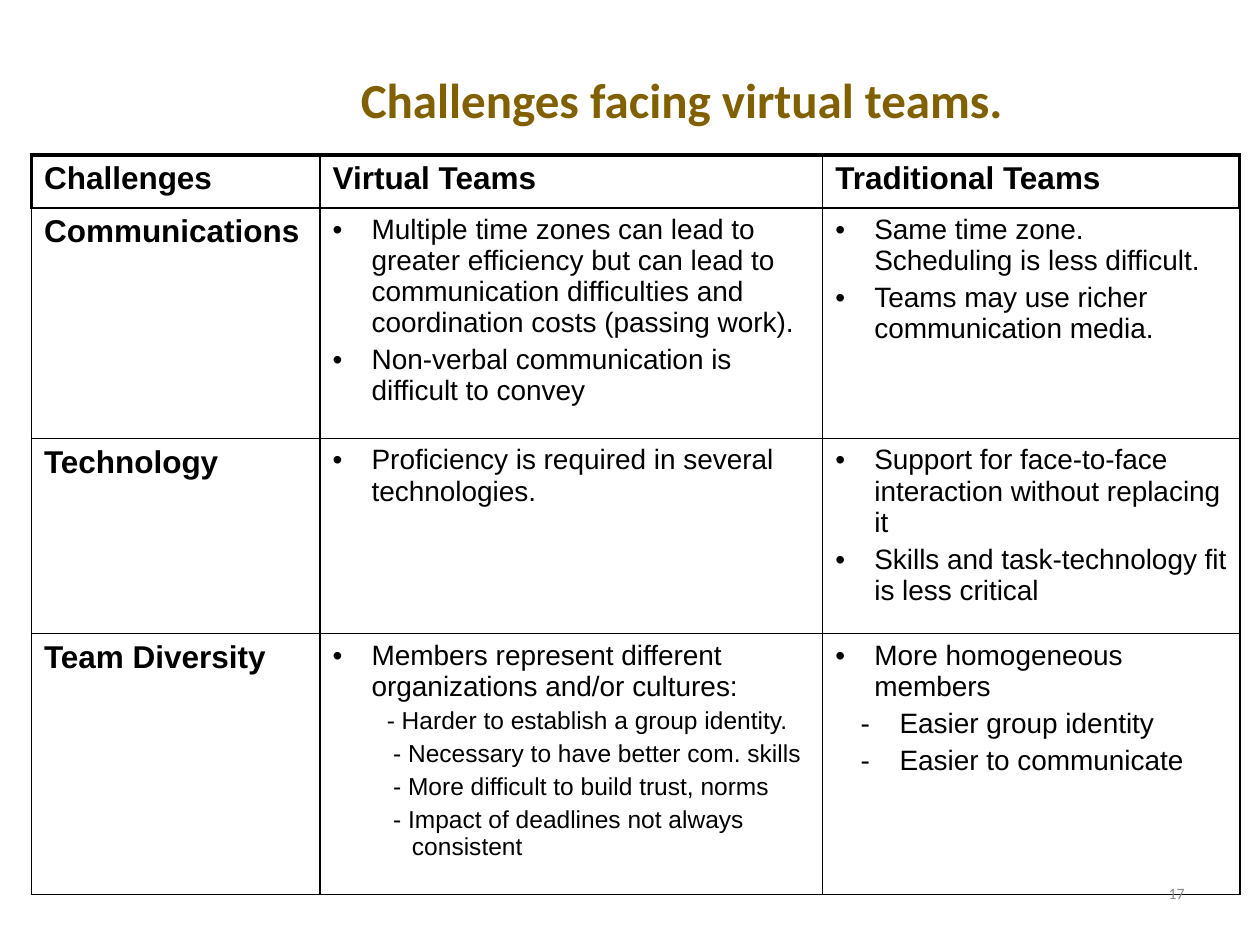
from dataclasses import dataclass

from lxml import etree
from pptx import Presentation
from pptx.dml.color import RGBColor
from pptx.enum import text
from pptx.oxml import ns
from pptx.util import Inches, Pt

BLACK = RGBColor(0x00, 0x00, 0x00)
GOLD = RGBColor(0x80, 0x60, 0x00)
GRAY = RGBColor(0x8C, 0x8C, 0x8C)

COLUMN_WIDTHS = (2.29, 3.99, 3.31)
ROW_HEIGHTS = (0.42, 1.83, 1.55, 2.07)
THIN, THICK = 1, 2.25


@dataclass(frozen=True)
class Style:
    size: float
    bold: bool = False
    left: float = 0
    hanging: float = 0
    bullet: str = ""
    space_before: float = 3.5


@dataclass(frozen=True)
class Line:
    words: str
    style: Style


HEADING = Style(18, bold=True)
POINT = Style(16, left=0.31, hanging=0.31, bullet="•")
DASH_POINT = Style(16, left=0.51, hanging=0.31, bullet="-")
FIRST_DETAIL = Style(14, left=0.43, space_before=3)
DETAIL = Style(14, left=0.48, space_before=3)
LONG_DETAIL = Style(14, left=0.63, hanging=0.15, space_before=3)


def lines(style: Style, *texts: str) -> list[Line]:
    return [Line(words, style) for words in texts]


ROWS = (
    (
        lines(HEADING, "Challenges"),
        lines(HEADING, "Virtual Teams"),
        lines(HEADING, "Traditional Teams"),
    ),
    (
        lines(HEADING, "Communications"),
        lines(
            POINT,
            "Multiple time zones can lead to greater efficiency but can lead to "
            "communication difficulties and coordination costs (passing work).",
            "Non-verbal communication is difficult to convey",
        ),
        lines(
            POINT,
            "Same time zone. Scheduling is less difficult.",
            "Teams may use richer communication media.",
        ),
    ),
    (
        lines(HEADING, "Technology"),
        lines(POINT, "Proficiency is required in several technologies."),
        lines(
            POINT,
            "Support for face-to-face interaction without replacing it",
            "Skills and task-technology fit is less critical",
        ),
    ),
    (
        lines(HEADING, "Team Diversity"),
        lines(POINT, "Members represent different organizations and/or cultures:")
        + lines(FIRST_DETAIL, "- Harder to establish a group identity.")
        + lines(
            DETAIL,
            "- Necessary to have better com. skills",
            "- More difficult to build trust, norms",
        )
        + lines(LONG_DETAIL, "- Impact of deadlines not always consistent"),
        lines(POINT, "More homogeneous members")
        + lines(DASH_POINT, "Easier group identity", "Easier to communicate"),
    ),
)


def set_font(para, name: str, size: float, color: RGBColor, bold: bool = False) -> None:
    para.font.name = name
    para.font.size = Pt(size)
    para.font.bold = bold
    para.font.color.rgb = color


def fill_cell(cell, content: list[Line]) -> None:
    frame = cell.text_frame
    for index, line in enumerate(content):
        para = frame.add_paragraph() if index else frame.paragraphs[0]
        style = line.style
        para.text = line.words
        props = para._p.get_or_add_pPr()
        props.set("marL", str(Inches(style.left)))
        props.set("indent", str(-Inches(style.hanging)))
        if index:
            para.space_before = Pt(style.space_before)
        if style.bullet:
            etree.SubElement(props, ns.qn("a:buFont"), typeface="Arial")
            etree.SubElement(props, ns.qn("a:buChar"), char=style.bullet)
        set_font(para, "Arial", style.size, BLACK, style.bold)


def set_borders(cell, left: float, right: float, top: float, bottom: float) -> None:
    props = cell._tc.get_or_add_tcPr()
    sides = {"a:lnL": left, "a:lnR": right, "a:lnT": top, "a:lnB": bottom}
    for index, (tag, width) in enumerate(sides.items()):
        border = etree.Element(ns.qn(tag), w=str(Pt(width)))
        fill = etree.SubElement(border, ns.qn("a:solidFill"))
        etree.SubElement(fill, ns.qn("a:srgbClr"), val=str(BLACK))
        props.insert(index, border)


def add_challenge_table(page) -> None:
    frame = page.shapes.add_table(
        len(ROW_HEIGHTS), len(COLUMN_WIDTHS), Inches(0.25), Inches(1.23),
        Inches(sum(COLUMN_WIDTHS)), Inches(sum(ROW_HEIGHTS)),
    )
    table = frame.table
    table.first_row = table.horz_banding = False
    for column, width in zip(table.columns, COLUMN_WIDTHS):
        column.width = Inches(width)
    for row, height in zip(table.rows, ROW_HEIGHTS):
        row.height = Inches(height)

    last = len(COLUMN_WIDTHS) - 1
    for r, row in enumerate(ROWS):
        outer = THIN if r else THICK
        for c, content in enumerate(row):
            cell = table.cell(r, c)
            cell.fill.background()
            fill_cell(cell, content)
            set_borders(
                cell,
                left=outer if c == 0 else THIN,
                right=outer if c == last else THIN,
                top=outer,
                bottom=THIN,
            )


def add_label(page, left: float, top: float, width: float, height: float, words: str,
              align: text.PP_ALIGN, anchor: text.MSO_ANCHOR, wrap: bool):
    box = page.shapes.add_textbox(
        Inches(left), Inches(top), Inches(width), Inches(height)
    )
    box.text_frame.word_wrap = wrap
    box.text_frame.vertical_anchor = anchor
    para = box.text_frame.paragraphs[0]
    para.text = words
    para.alignment = align
    return para


def main() -> None:
    deck = Presentation()
    deck.slide_width, deck.slide_height = Inches(10), Inches(7.5)
    page = deck.slides.add_slide(deck.slide_layouts[6])

    add_challenge_table(page)
    number = add_label(page, 7.17, 6.83, 2.33, 0.52, "17",
                       text.PP_ALIGN.RIGHT, text.MSO_ANCHOR.MIDDLE, wrap=True)
    set_font(number, "Calibri", 9, GRAY)
    title = add_label(page, 2.73, 0.5, 5.36, 0.57, "Challenges facing virtual teams.",
                      text.PP_ALIGN.CENTER, text.MSO_ANCHOR.TOP, wrap=False)
    set_font(title, "Calibri", 28, GOLD, bold=True)

    deck.save("out.pptx")


if __name__ == "__main__":
    main()
